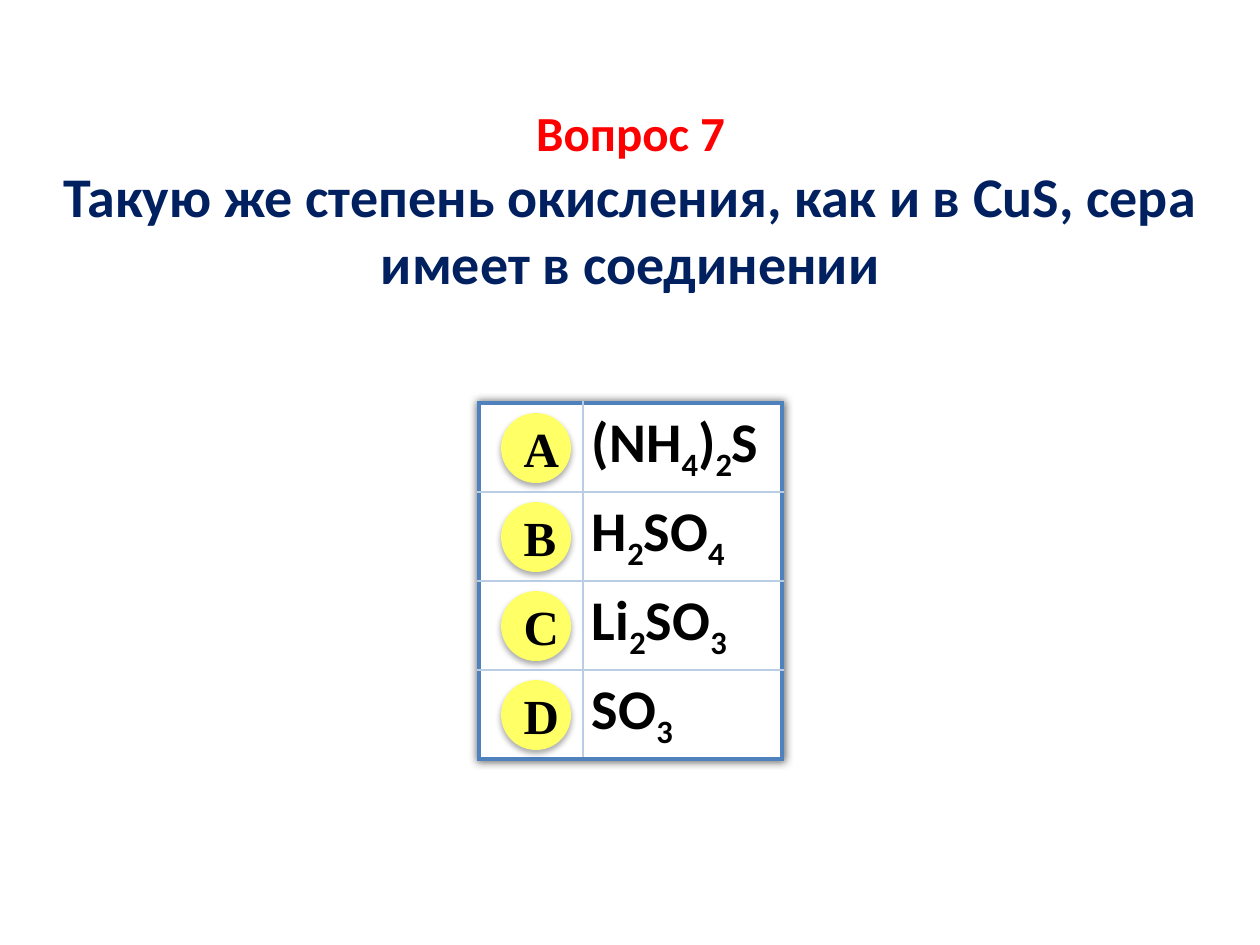
from dataclasses import dataclass
from itertools import groupby

from lxml import etree
from pptx import Presentation
from pptx.dml.color import RGBColor
from pptx.enum.shapes import MSO_SHAPE
from pptx.enum.text import MSO_ANCHOR, MSO_AUTO_SIZE, PP_ALIGN
from pptx.oxml.ns import qn
from pptx.util import Emu, Pt

EMU_PER_PX = 914400 / 126
OVAL = MSO_SHAPE.OVAL
TOP, MIDDLE = MSO_ANCHOR.TOP, MSO_ANCHOR.MIDDLE
CENTER = PP_ALIGN.CENTER
FIT_SHAPE = MSO_AUTO_SIZE.SHAPE_TO_FIT_TEXT
TITLE_ONLY = 5

QUESTION = (
    "Вопрос 7",
    "Такую же степень окисления, как и в CuS, сера имеет в соединении",
)
ANSWERS = {"A": "(NH4)2S", "B": "H2SO4", "C": "Li2SO3", "D": "SO3"}

TABLE_LEFT, TABLE_TOP = 479, 403
COLUMN_WIDTHS = (104, 199)
ROW_HEIGHT = 89
BADGE_LEFT, BADGE_TOP, BADGE_SIZE = 501, 413, 70


@dataclass(frozen=True)
class Theme:
    white: str = "FFFFFF"
    black: str = "000000"
    number: str = "FF0000"
    question: str = "002060"
    badge: str = "FFFF66"
    frame: str = "4F81BD"
    grid: str = "B9CDE5"
    body_font: str = "Calibri"
    badge_font: str = "Times New Roman"
    small: int = 28
    large: int = 32
    frame_width: int = 3
    grid_width: int = 1


THEME = Theme()


def px(length):
    return Emu(round(length * EMU_PER_PX))


def paint(fill, color):
    fill.solid()
    fill.fore_color.rgb = RGBColor.from_string(color)


def style_font(para, name, size, color):
    font = para.font
    font.name, font.size, font.bold = name, Pt(size), True
    font.color.rgb = RGBColor.from_string(color)


def add_color(parent, color):
    return etree.SubElement(parent, qn("a:srgbClr"), val=color)


def add_shadow(effects, blur, distance, opacity):
    """Append a downward shadow, in points and percent, to an effect list."""
    shadow = etree.SubElement(
        effects, qn("a:outerShdw"), blurRad=str(Pt(blur)),
        dist=str(Pt(distance)), dir="5400000", rotWithShape="0")
    color = add_color(shadow, THEME.black)
    etree.SubElement(color, qn("a:alpha"), val=str(opacity * 1000))


def add_border(cell, side, is_frame):
    width = THEME.frame_width if is_frame else THEME.grid_width
    line = etree.SubElement(
        cell._tc.get_or_add_tcPr(), qn(f"a:ln{side}"), w=str(Pt(width)))
    fill = etree.SubElement(line, qn("a:solidFill"))
    add_color(fill, THEME.frame if is_frame else THEME.grid)


def write_formula(para, formula):
    """Write a chemical formula with its digits as subscripts."""
    style_font(para, THEME.body_font, THEME.large, THEME.black)
    for is_index, letters in groupby(formula, str.isdigit):
        span = para.add_run()
        span.text = "".join(letters)
        if is_index:
            span._r.get_or_add_rPr().set("baseline", "-25000")


def format_cell(cell, row, column):
    last_row, last_column = len(ANSWERS) - 1, len(COLUMN_WIDTHS) - 1
    outer_sides = {"L": column == 0, "R": column == last_column,
                   "T": row == 0, "B": row == last_row}
    for side, is_frame in outer_sides.items():
        add_border(cell, side, is_frame)
    paint(cell.fill, THEME.white)
    cell.vertical_anchor = MIDDLE
    cell.margin_left = cell.margin_right = px(9)
    cell.margin_top = cell.margin_bottom = 0


def add_question(page):
    box = page.shapes.title
    box.left, box.top, box.width, box.height = map(px, (30, 96, 1201, 208))
    paint(box.fill, THEME.white)
    frame = box.text_frame
    frame.text = "\n".join(QUESTION)
    frame.word_wrap = True
    frame.auto_size = FIT_SHAPE
    frame.vertical_anchor = TOP
    styles = ((THEME.small, THEME.number), (THEME.large, THEME.question))
    for para, (size, color) in zip(frame.paragraphs, styles):
        para.alignment = CENTER
        style_font(para, THEME.body_font, size, color)


def add_answer_table(page):
    table = page.shapes.add_table(
        len(ANSWERS), len(COLUMN_WIDTHS), px(TABLE_LEFT), px(TABLE_TOP),
        px(sum(COLUMN_WIDTHS)), px(ROW_HEIGHT * len(ANSWERS))).table
    table.first_row = table.horz_banding = False
    effects = etree.Element(qn("a:effectLst"))
    add_shadow(effects, blur=5, distance=0, opacity=60)
    table._tbl.tblPr.insert(0, effects)
    for column, width in zip(table.columns, COLUMN_WIDTHS):
        column.width = px(width)
    for row, formula in enumerate(ANSWERS.values()):
        table.rows[row].height = px(ROW_HEIGHT)
        for column in range(len(COLUMN_WIDTHS)):
            format_cell(table.cell(row, column), row, column)
        write_formula(table.cell(row, 1).text_frame.paragraphs[0], formula)


def add_badge(group, letter, top):
    badge = group.shapes.add_shape(
        OVAL, px(BADGE_LEFT), px(top), px(BADGE_SIZE), px(BADGE_SIZE))
    paint(badge.fill, THEME.badge)
    badge.line.fill.background()
    badge.shadow.inherit = False
    effects = badge._element.spPr.find(qn("a:effectLst"))
    add_shadow(effects, blur=3.5, distance=2.2, opacity=32)
    frame = badge.text_frame
    frame.vertical_anchor = MIDDLE
    para = frame.paragraphs[0]
    para.text = letter
    para.alignment = CENTER
    style_font(para, THEME.badge_font, THEME.small, THEME.black)


def main():
    deck = Presentation()
    deck.slide_width, deck.slide_height = px(1260), px(945)
    page = deck.slides.add_slide(deck.slide_layouts[TITLE_ONLY])
    add_question(page)
    add_answer_table(page)
    badges = page.shapes.add_group_shape()
    for row, letter in enumerate(ANSWERS):
        add_badge(badges, letter, BADGE_TOP + row * ROW_HEIGHT)
    deck.save("out.pptx")


if __name__ == "__main__":
    main()
